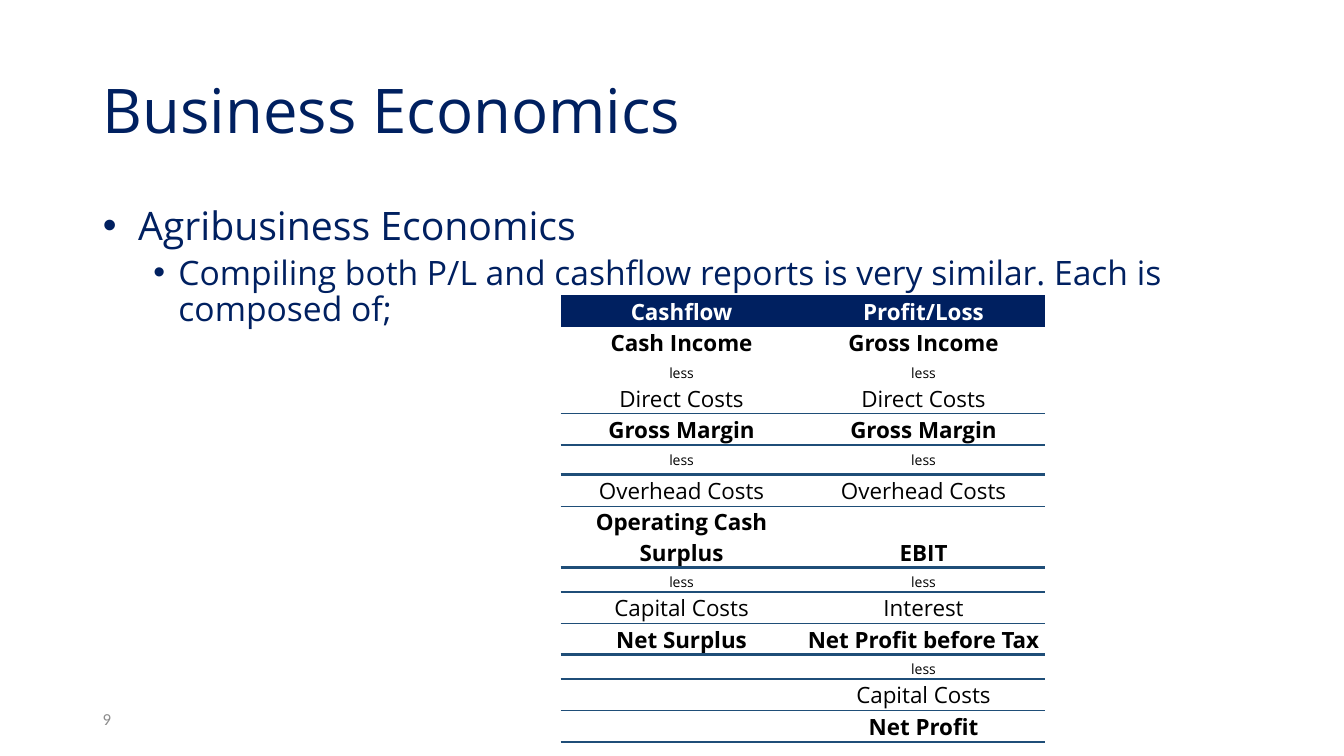
from lxml import etree
from pptx import Presentation
from pptx.dml.color import RGBColor
from pptx.enum.text import MSO_ANCHOR as Anchor, MSO_AUTO_SIZE as AutoSize, PP_ALIGN as Align
from pptx.oxml.ns import qn
from pptx.util import Inches, Pt

# Content
TITLE = "Business Economics"
BULLETS = [
    # text, level, kind, left margin, hanging indent, space before
    ("Agribusiness Economics", 0, "topic", 0.35, 0.35, 0),
    ("Compiling both P/L and cashflow reports is very similar. Each is composed of;",
     1, "point", 0.75, 0.25, 5),
]
PAGE_NUMBER = "9"
STATEMENT = [
    # row kind, cashflow, profit/loss
    ("header", "Cashflow", "Profit/Loss"),
    ("income", "Cash Income", "Gross Income"),
    ("less", "less", "less"),
    ("cost", "Direct Costs", "Direct Costs"),
    ("total", "Gross Margin", "Gross Margin"),
    ("spaced less", "less", "less"),
    ("cost", "Overhead Costs", "Overhead Costs"),
    ("total", "Operating Cash Surplus", "EBIT"),
    ("less", "less", "less"),
    ("cost", "Capital Costs", "Interest"),
    ("total", "Net Surplus", "Net Profit before Tax"),
    ("less", "", "less"),
    ("cost", "", "Capital Costs"),
    ("total", "", "Net Profit"),
]

# Theme
THEME = {
    "navy": "002060", "rule": "1F4E78", "thin": 0.5, "thick": 2,
    "text": {
        "title": {"size": 44, "color": "002060"},
        "topic": {"size": 28, "color": "002060"},
        "point": {"size": 24, "color": "002060"},
        "number": {"size": 12, "color": "8C8C8C", "name": "Calibri"},
        "header": {"size": 16, "color": "FFFFFF", "bold": True},
        "income": {"size": 16, "color": "000000", "bold": True},
        "total": {"size": 16, "color": "000000", "bold": True},
        "cost": {"size": 16, "color": "000000"},
        "less": {"size": 10, "color": "000000"},
        "spaced less": {"size": 10, "color": "000000"},
    },
}
PLAIN_TABLE = "{2D5ABB26-0587-4C30-8999-92F81FD0307C}"
COLUMN_WIDTH, ROW_HEIGHT, SPACED_HEIGHT = 2.4, 0.24, 0.29


def place(shape, left, top, width, height):
    for side, value in zip(("left", "top", "width", "height"), (left, top, width, height)):
        setattr(shape, side, Inches(value))


def write(para, text, kind):
    style = {"name": "Open Sans", "bold": False, **THEME["text"][kind]}
    style["size"] = Pt(style["size"])
    color = style.pop("color")
    span = para.add_run()
    span.text = text
    for name, value in style.items():
        setattr(span.font, name, value)
    span.font.color.rgb = RGBColor.from_string(color)


def set_frame(frame, anchor):
    for name, value in {"word_wrap": True, "auto_size": AutoSize.NONE,
                        "vertical_anchor": anchor}.items():
        setattr(frame, name, value)


def add_bullet(para, left, hanging):
    props = para._p.get_or_add_pPr()
    props.set("marL", str(Inches(left)))
    props.set("indent", str(-Inches(hanging)))
    etree.SubElement(props, qn("a:buFont")).set("typeface", "Arial")
    etree.SubElement(props, qn("a:buChar")).set("char", "•")


def add_rule(cell, tag, width):
    line = etree.Element(qn(tag), w=str(Pt(width)))
    fill = etree.SubElement(line, qn("a:solidFill"))
    etree.SubElement(fill, qn("a:srgbClr")).set("val", THEME["rule"])
    props = cell._tc.get_or_add_tcPr()
    props.insert(len(props.findall(qn("a:lnT"))), line)


def fill_cell(cell, text, kind):
    edge = 0.05 if kind == "spaced less" else 0
    margins = {"left": 0.01, "right": 0.01, "top": edge or 0.01, "bottom": edge}
    for side, value in margins.items():
        setattr(cell, f"margin_{side}", Inches(value))
    cell.vertical_anchor = Anchor.BOTTOM
    para = cell.text_frame.paragraphs[0]
    para.alignment = Align.CENTER
    if text:
        write(para, text, kind)
    else:
        size = THEME["text"][kind]["size"] * 100
        etree.SubElement(para._p, qn("a:endParaRPr")).set("sz", str(size))
    if kind == "header":
        cell.fill.solid()
        cell.fill.fore_color.rgb = RGBColor.from_string(THEME["navy"])
    else:
        cell.fill.background()


def main():
    deck = Presentation()
    deck.slide_width, deck.slide_height = Inches(13.33), Inches(7.5)
    page = deck.slides.add_slide(deck.slide_layouts[1])

    # Title
    title = page.shapes.title
    place(title, 0.92, 0.4, 11.5, 1.45)
    set_frame(title.text_frame, Anchor.MIDDLE)
    para = title.text_frame.paragraphs[0]
    para.alignment, para.line_spacing = Align.LEFT, 0.9
    write(para, TITLE, "title")

    # Bulleted list
    body = page.placeholders[1]
    place(body, 0.92, 2, 11.5, 4.76)
    frame = body.text_frame
    set_frame(frame, Anchor.TOP)
    for index, (text, level, kind, left, hanging, before) in enumerate(BULLETS):
        para = frame.add_paragraph() if index else frame.paragraphs[0]
        add_bullet(para, left, hanging)
        para.level, para.line_spacing, para.space_before = level, 0.9, Pt(before)
        write(para, text, kind)

    # Page number
    box = page.shapes.add_textbox(Inches(0.92), Inches(6.93), Inches(3), Inches(0.4))
    set_frame(box.text_frame, Anchor.MIDDLE)
    write(box.text_frame.paragraphs[0], PAGE_NUMBER, "number")

    # Statement table
    heights = [SPACED_HEIGHT if row[0] == "spaced less" else ROW_HEIGHT for row in STATEMENT]
    table = page.shapes.add_table(len(STATEMENT), 2, Inches(5.56), Inches(2.93),
                                  Inches(2 * COLUMN_WIDTH), Inches(sum(heights))).table
    table.first_row = table.horz_banding = False
    table._tbl.tblPr.find(qn("a:tableStyleId")).text = PLAIN_TABLE
    for column in table.columns:
        column.width = Inches(COLUMN_WIDTH)
    for index, (kind, *texts) in enumerate(STATEMENT):
        table.rows[index].height = Inches(heights[index])
        for column, text in enumerate(texts):
            fill_cell(table.cell(index, column), text, kind)

    # Thin rule above each total, thick rule below, on both cells that share the edge
    for index, row in enumerate(STATEMENT):
        if row[0] != "total":
            continue
        edges = [(index - 1, "a:lnB", "thin"), (index, "a:lnT", "thin"),
                 (index, "a:lnB", "thick"), (index + 1, "a:lnT", "thick")]
        for target, tag, weight in edges:
            if target < len(STATEMENT):
                for cell in table.rows[target].cells:
                    add_rule(cell, tag, THEME[weight])

    deck.save("out.pptx")


if __name__ == "__main__":
    main()
